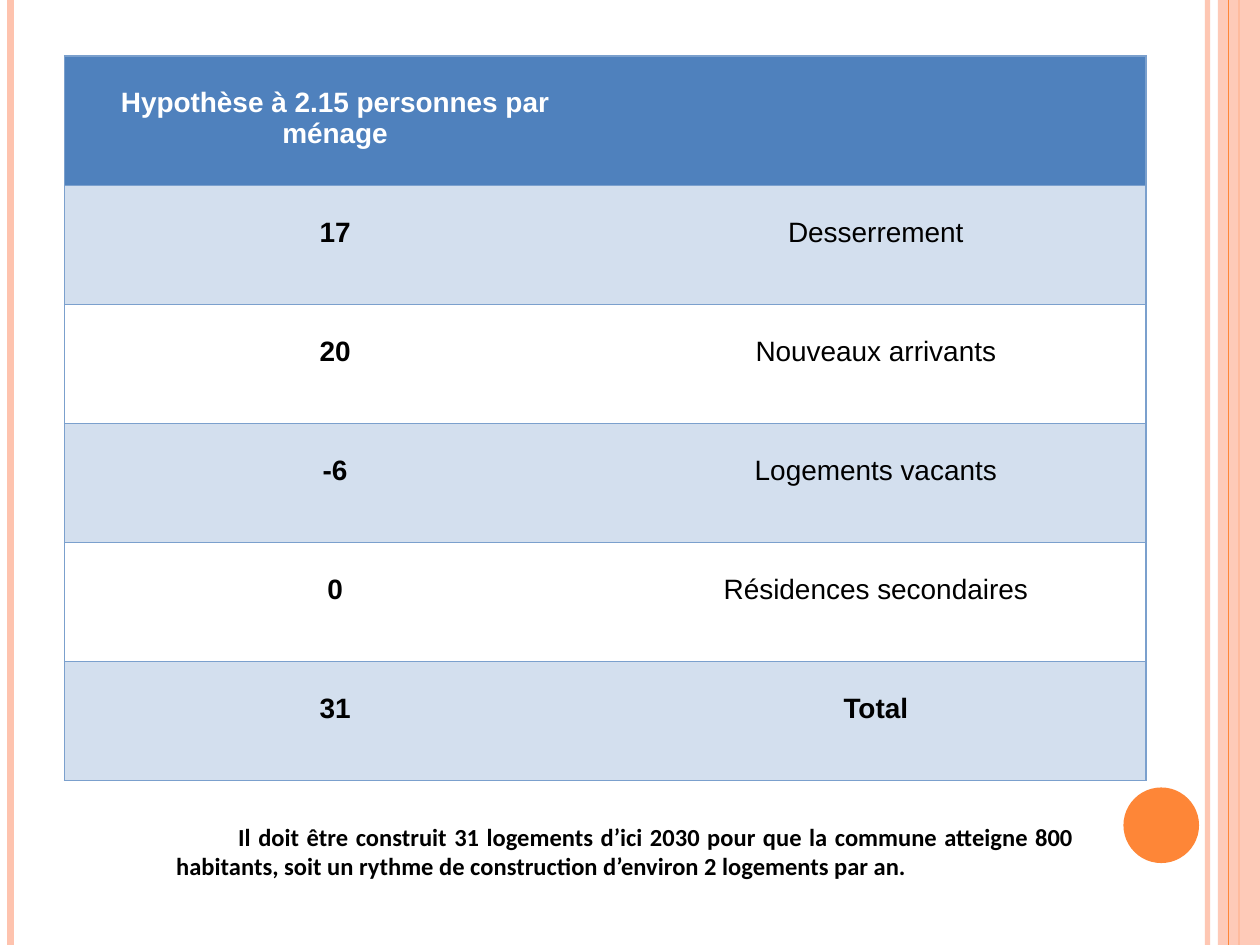
from lxml import etree
from pptx import Presentation
from pptx.dml.color import RGBColor
from pptx.enum.shapes import MSO_CONNECTOR, MSO_SHAPE
from pptx.enum.text import MSO_ANCHOR, MSO_AUTO_SIZE, PP_ALIGN
from pptx.oxml.ns import qn
from pptx.util import Pt

STRAIGHT = MSO_CONNECTOR.STRAIGHT
RECTANGLE, OVAL = MSO_SHAPE.RECTANGLE, MSO_SHAPE.OVAL
CENTER, JUSTIFY = PP_ALIGN.CENTER, PP_ALIGN.JUSTIFY
MIDDLE = MSO_ANCHOR.MIDDLE
FIT_SHAPE = MSO_AUTO_SIZE.SHAPE_TO_FIT_TEXT

PAGE_WIDTH, PAGE_HEIGHT = 720, 540
PEACH, ORANGE = "FEC3AE", "FE8637"
BLACK, WHITE = "000000", "FFFFFF"
HEADER_BLUE, BAND_BLUE, BORDER_BLUE = "4F81BD", "D3DFEE", "7BA0CD"


def color(value):
    return RGBColor.from_string(value)


def set_alpha(fill_parent, percent):
    tint = next(fill_parent.iter(qn("a:srgbClr")))
    etree.SubElement(tint, qn("a:alpha"), val=str(percent * 1000))


class SlideBuilder:
    def __init__(self, page):
        self.page = page

    def vertical_line(self, x, tint, width, alpha=100):
        line = self.page.shapes.add_connector(
            STRAIGHT, Pt(x), Pt(0), Pt(x), Pt(PAGE_HEIGHT))
        line.line.color.rgb = color(tint)
        line.line.width = Pt(width)
        properties = line._element.spPr
        if alpha < 100:
            set_alpha(properties, alpha)
        etree.SubElement(properties, qn("a:effectLst"))

    def shape(self, kind, left, top, width, height, tint, alpha=100):
        shape = self.page.shapes.add_shape(
            kind, Pt(left), Pt(top), Pt(width), Pt(height))
        shape.shadow.inherit = False
        shape.fill.solid()
        shape.fill.fore_color.rgb = color(tint)
        shape.line.fill.background()
        if alpha < 100:
            set_alpha(shape._element.spPr, alpha)

    def add_text(self, para, text, font, size, tint, bold, align):
        para.alignment = align
        span = para.add_run()
        span.text = text
        span.font.name = font
        span.font.size = Pt(size)
        span.font.bold = bold
        span.font.color.rgb = color(tint)

    def cell_borders(self, cell, sides):
        properties = cell._tc.get_or_add_tcPr()
        for side in "LRTB":
            line = etree.SubElement(properties, qn("a:ln" + side), w=str(Pt(1)))
            if side in sides:
                fill = etree.SubElement(line, qn("a:solidFill"))
                etree.SubElement(fill, qn("a:srgbClr"), val=BORDER_BLUE)
            else:
                etree.SubElement(line, qn("a:noFill"))

    def table(self, left, top, column_width, row_heights, rows):
        columns = len(rows[0])
        table = self.page.shapes.add_table(
            len(rows), columns, Pt(left), Pt(top),
            Pt(column_width * columns), Pt(sum(row_heights))).table
        for column in table.columns:
            column.width = Pt(column_width)
        for r, texts in enumerate(rows):
            table.rows[r].height = Pt(row_heights[r])
            for c, text in enumerate(texts):
                cell = table.cell(r, c)
                cell.margin_left = cell.margin_right = Pt(5)
                cell.margin_top, cell.margin_bottom = Pt(18), Pt(0)
                self.cell_borders(cell, "LTB" if c == 0 else "RTB")
                # Header, then alternating bands
                if r == 0 or r % 2:
                    cell.fill.solid()
                    cell.fill.fore_color.rgb = color(BAND_BLUE if r else HEADER_BLUE)
                else:
                    cell.fill.background()
                if text:
                    bold = c == 0 or r == len(rows) - 1
                    self.add_text(cell.text_frame.paragraphs[0], text, "Arial", 16,
                                  BLACK if r else WHITE, bold, CENTER)

    def note(self, left, top, width, height, text):
        box = self.page.shapes.add_textbox(Pt(left), Pt(top), Pt(width), Pt(height))
        frame = box.text_frame
        frame.word_wrap = True
        frame.auto_size = FIT_SHAPE
        frame.vertical_anchor = MIDDLE
        para = frame.paragraphs[0]
        self.add_text(para, text, "Calibri", 14, BLACK, True, JUSTIFY)
        para._p.get_or_add_pPr().set("indent", str(Pt(35.4)))


def main():
    deck = Presentation()
    deck.slide_width, deck.slide_height = Pt(PAGE_WIDTH), Pt(PAGE_HEIGHT)
    builder = SlideBuilder(deck.slides.add_slide(deck.slide_layouts[6]))

    # Side stripes and disc
    builder.vertical_line(690, PEACH, 3, alpha=93)
    builder.vertical_line(6, PEACH, 4.5)
    builder.vertical_line(708, ORANGE, 1.5)
    builder.shape(RECTANGLE, 696, 0, 24, PAGE_HEIGHT, PEACH, alpha=87)
    builder.vertical_line(702, ORANGE, 0.75)
    builder.shape(OVAL, 642, 450, 43.2, 43.2, ORANGE)

    # Housing needs
    rows = [
        ("Hypothèse à 2.15 personnes par ménage", ""),
        ("17", "Desserrement"),
        ("20", "Nouveaux arrivants"),
        ("-6", "Logements vacants"),
        ("0", "Résidences secondaires"),
        ("31", "Total"),
    ]
    builder.table(37, 32, 309, [74] + [68] * 5, rows)

    # Conclusion
    builder.note(93.6, 466, 527, 41,
                 "Il doit être construit 31 logements d’ici 2030 pour que la commune "
                 "atteigne 800 habitants, soit un rythme de construction d’environ "
                 "2 logements par an.")

    deck.save("out.pptx")


if __name__ == "__main__":
    main()
